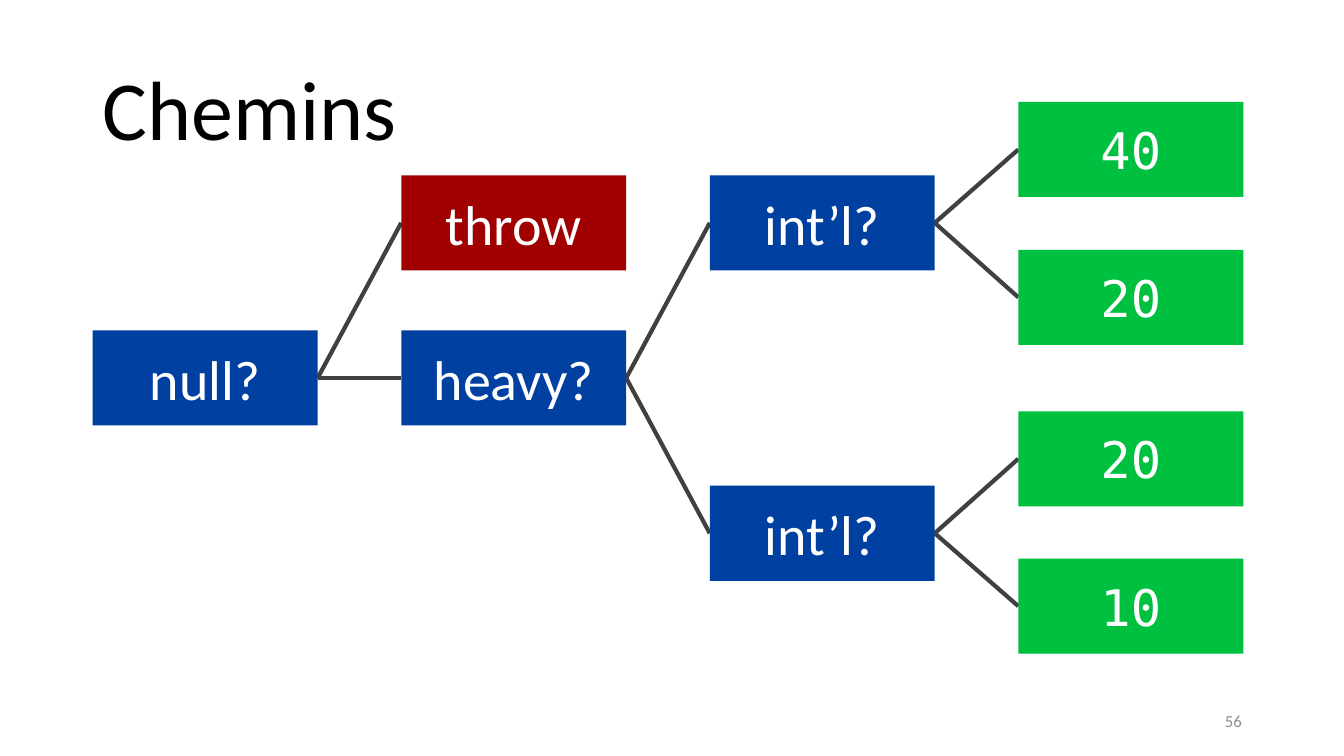
"""Build the decision-tree slide "Chemins"."""
import dataclasses
import typing

import lxml.etree
import pptx
import pptx.dml.color
import pptx.enum.shapes
import pptx.enum.text
import pptx.oxml.ns
import pptx.util

Pt = pptx.util.Pt
RGBColor = pptx.dml.color.RGBColor
Align = pptx.enum.text.PP_ALIGN

BLACK = RGBColor(0x00, 0x00, 0x00)
WHITE = RGBColor(0xFF, 0xFF, 0xFF)
GREY = RGBColor(0x8C, 0x8C, 0x8C)
DARK_GREY = RGBColor(0x40, 0x40, 0x40)
BLUE = RGBColor(0x00, 0x40, 0xA0)
RED = RGBColor(0xA0, 0x00, 0x00)
GREEN = RGBColor(0x00, 0xC0, 0x40)

SANS = "Calibri"
MONO = "DejaVu Sans Mono"

TREE_LEFT = 66.2
COLUMN_PITCH = 220.4
NODE_WIDTH = 160.7
NODE_HEIGHT = 67.9


@dataclasses.dataclass(frozen=True)
class Node:
    label: str
    column: int
    middle: float
    fill: RGBColor = BLUE
    font: str = SANS
    size: float = 40
    children: tuple["Node", ...] = ()

    @property
    def left(self) -> float:
        return TREE_LEFT + self.column * COLUMN_PITCH


def outcome(label: str, middle: float) -> Node:
    return Node(label, 3, middle, GREEN, MONO, 36)


HEAVY_PATH = Node("int’l?", 2, 159.2, children=(outcome("40", 106.8), outcome("20", 212.4)))
LIGHT_PATH = Node("int’l?", 2, 380.9, children=(outcome("20", 327.7), outcome("10", 433)))
ROOT = Node("null?", 0, 270, children=(
    Node("throw", 1, 159.2, RED),
    Node("heavy?", 1, 270, children=(HEAVY_PATH, LIGHT_PATH)),
))


def write_text(box: typing.Any, text: str, *, size: float, color: RGBColor,
               font: str = SANS, align: Align = Align.LEFT, spacing: float = 1.0) -> None:
    frame = box.text_frame
    frame.word_wrap = True
    frame.vertical_anchor = pptx.enum.text.MSO_ANCHOR.MIDDLE
    para = frame.paragraphs[0]
    para.alignment = align
    para.line_spacing = spacing
    span = para.add_run()
    span.text = text
    span.font.name = font
    span.font.size = Pt(size)
    span.font.color.rgb = color


def draw_branch(slide: typing.Any, parent: Node, child: Node) -> None:
    line = slide.shapes.add_connector(
        pptx.enum.shapes.MSO_CONNECTOR.STRAIGHT,
        Pt(parent.left + NODE_WIDTH), Pt(parent.middle), Pt(child.left), Pt(child.middle))
    line.line.color.rgb = DARK_GREY
    line.line.width = Pt(3)
    lxml.etree.SubElement(line._element.spPr, pptx.oxml.ns.qn("a:effectLst"))


def draw_tree(slide: typing.Any, node: Node) -> None:
    for child in node.children:
        draw_branch(slide, node, child)
        draw_tree(slide, child)
    box = slide.shapes.add_shape(
        pptx.enum.shapes.MSO_SHAPE.RECTANGLE, Pt(node.left),
        Pt(node.middle - NODE_HEIGHT / 2), Pt(NODE_WIDTH), Pt(NODE_HEIGHT))
    box.shadow.inherit = False
    box.fill.solid()
    box.fill.fore_color.rgb = node.fill
    box.line.fill.background()
    write_text(box, node.label, size=node.size, color=WHITE, font=node.font, align=Align.CENTER)


def main() -> None:
    deck = pptx.Presentation()
    deck.slide_width, deck.slide_height = Pt(960), Pt(540)
    slide = deck.slides.add_slide(deck.slide_layouts[6])
    title = slide.shapes.add_textbox(Pt(66.2), Pt(28.8), Pt(828), Pt(104.4))
    write_text(title, "Chemins", size=60, color=BLACK, spacing=0.9)
    number = slide.shapes.add_textbox(Pt(678.2), Pt(500.5), Pt(216), Pt(28.8))
    write_text(number, "56", size=12, color=GREY, align=Align.RIGHT)
    draw_tree(slide, ROOT)
    deck.save("out.pptx")


if __name__ == "__main__":
    main()
